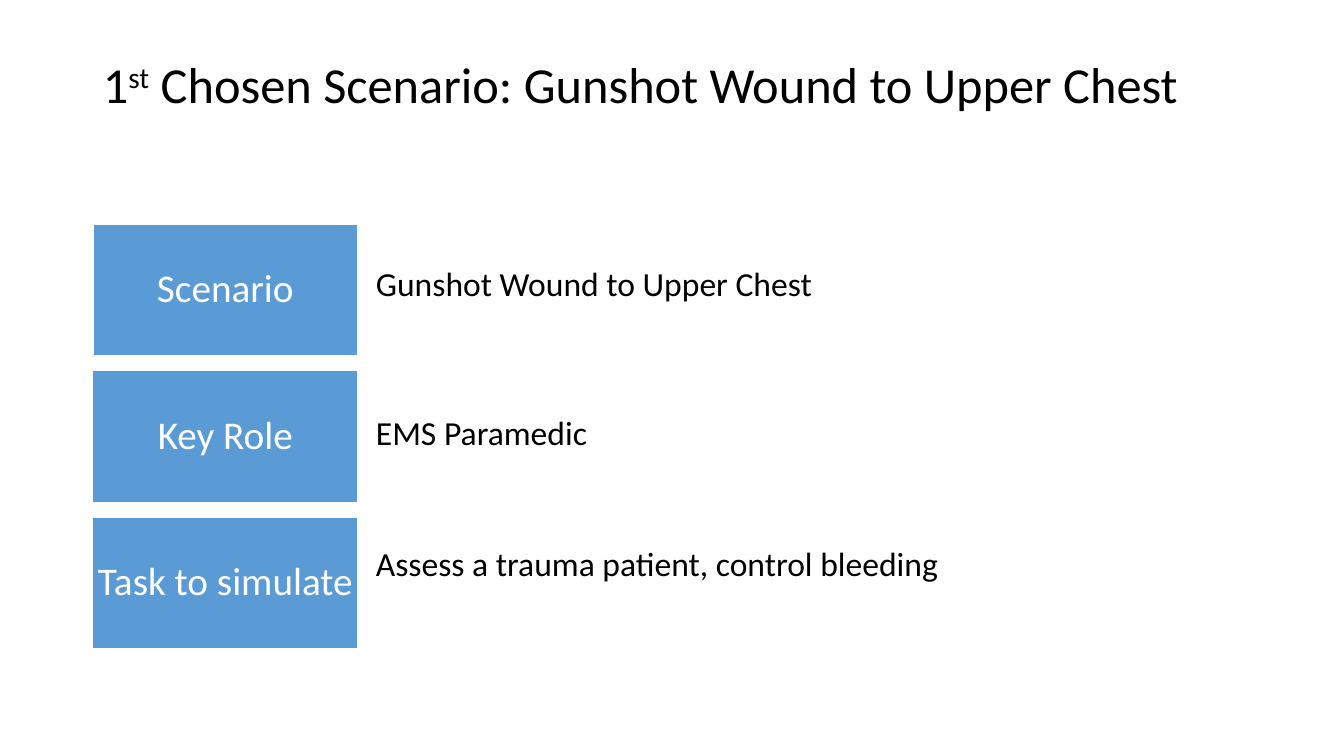
from dataclasses import dataclass

from pptx import Presentation
from pptx.dml.color import RGBColor
from pptx.enum.shapes import MSO_SHAPE as Preset
from pptx.enum.text import MSO_ANCHOR as Anchor, MSO_AUTO_SIZE as AutoSize, PP_ALIGN as Align
from pptx.util import Inches, Pt


@dataclass(frozen=True)
class Theme:
    font: str = "Calibri"
    ink: RGBColor = RGBColor(0x00, 0x00, 0x00)
    paper: RGBColor = RGBColor(0xFF, 0xFF, 0xFF)
    accent: RGBColor = RGBColor(0x5B, 0x9B, 0xD5)
    title_size: int = 36
    label_size: int = 28
    detail_size: int = 24


class ScenarioSlide:
    LEFT, TOP = 0.92, 2.22
    COLUMN, ROW = 2.71, (5.13 - 2.22) / 2

    def __init__(self, deck, theme):
        self.theme = theme
        self.slide = deck.slides.add_slide(deck.slide_layouts[5])

    def place(self, column, row, columns, rows):
        return (
            Inches(self.LEFT + column * self.COLUMN),
            Inches(self.TOP + row * self.ROW),
            Inches(columns * self.COLUMN),
            Inches(rows * self.ROW),
        )

    def add_words(self, paragraph, text, size, color):
        run = paragraph.add_run()
        run.text = text
        run.font.name = self.theme.font
        run.font.size = Pt(size)
        run.font.color.rgb = color
        return run

    def title(self, number, ordinal, rest):
        heading = self.slide.shapes.title
        heading.left, heading.top, heading.width, heading.height = self.place(0, -1.25, 4.24, 0.64)
        frame = heading.text_frame
        frame.vertical_anchor = Anchor.MIDDLE
        frame.auto_size = AutoSize.NONE
        line = frame.paragraphs[0]
        line.alignment = Align.LEFT
        line.line_spacing = 0.9
        for text, baseline in ((number, 0), (ordinal, 30000), (rest, 0)):
            run = self.add_words(line, text, self.theme.title_size, self.theme.ink)
            if baseline:
                run.font._element.set("baseline", str(baseline))

    def label(self, row, text, border):
        card = self.slide.shapes.add_shape(Preset.RECTANGLE, *self.place(0, row, 0.97, 0.9))
        card.shadow.inherit = False
        card.fill.solid()
        card.fill.fore_color.rgb = self.theme.accent
        card.line.color.rgb = self.theme.paper
        card.line.width = Pt(border)
        frame = card.text_frame
        frame.word_wrap = True
        frame.vertical_anchor = Anchor.MIDDLE
        frame.margin_left = frame.margin_right = Inches(0.03)
        frame.margin_top = frame.margin_bottom = Inches(0.03)
        line = frame.paragraphs[0]
        line.alignment = Align.CENTER
        line.line_spacing = 0.9
        self.add_words(line, text, self.theme.label_size, self.theme.paper)

    def detail(self, row, columns, text):
        note = self.slide.shapes.add_textbox(*self.place(1, row, columns, 0.35))
        frame = note.text_frame
        frame.word_wrap = False
        frame.auto_size = AutoSize.SHAPE_TO_FIT_TEXT
        self.add_words(frame.paragraphs[0], text, self.theme.detail_size, self.theme.ink)


def main():
    deck = Presentation()
    deck.slide_width, deck.slide_height = Inches(13.33), Inches(7.5)
    scenario = ScenarioSlide(deck, Theme())
    scenario.title("1", "st", " Chosen Scenario: Gunshot Wound to Upper Chest")
    facts = (
        ("Scenario", 1.5, "Gunshot Wound to Upper Chest", 0.23, 1.69),
        ("Key Role", 1, "EMS Paramedic", 0.25, 0.86),
        ("Task to simulate", 1, "Assess a trauma patient, control bleeding", 0.14, 2.15),
    )
    for row, (name, border, answer, drop, columns) in enumerate(facts):
        scenario.label(row, name, border)
        scenario.detail(row + drop, columns, answer)
    deck.save("out.pptx")


if __name__ == "__main__":
    main()
